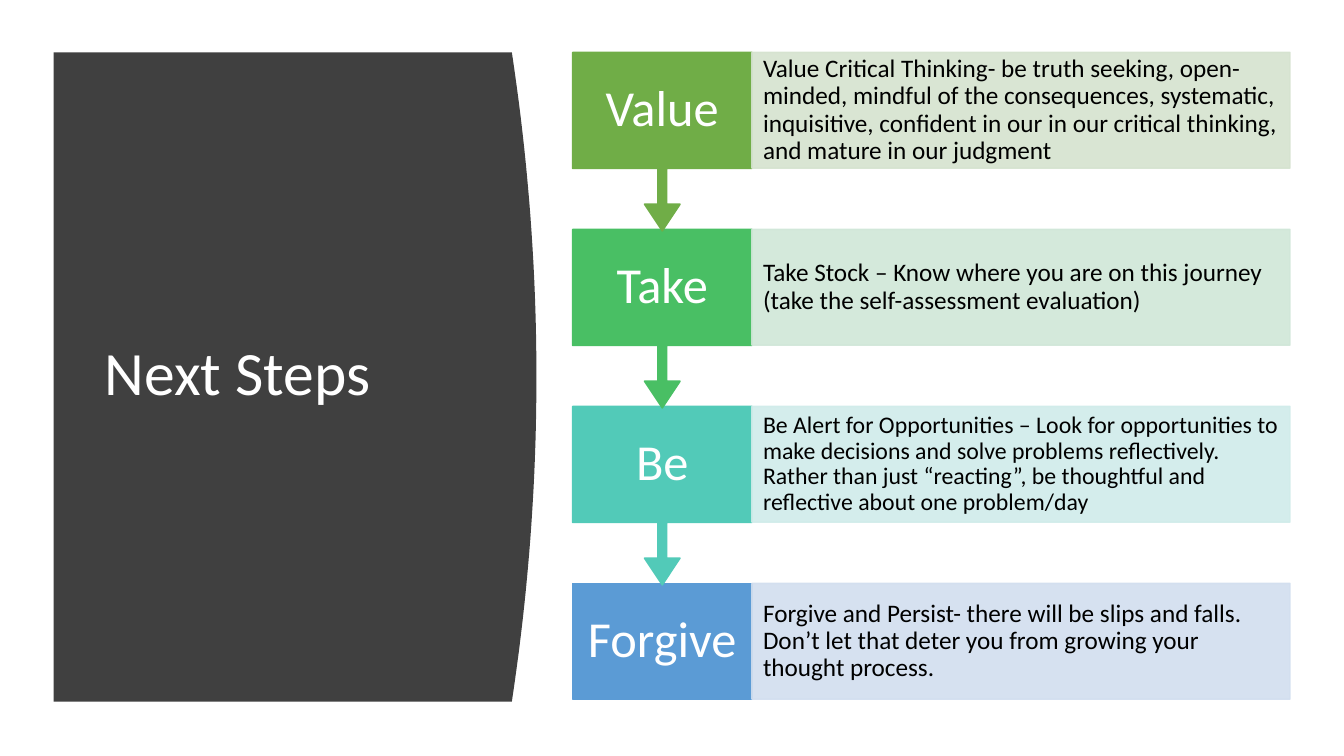
from lxml.etree import SubElement
from pptx import Presentation
from pptx.dml.color import RGBColor
from pptx.enum.shapes import MSO_SHAPE
from pptx.enum.text import MSO_ANCHOR, PP_ALIGN
from pptx.oxml.ns import qn
from pptx.util import Cm, Pt


def paint(color_format, hex_color, opacity=100):
    color_format.rgb = RGBColor.from_string(hex_color)
    if opacity < 100:
        # The colour element is the only child of the solid fill
        for color in color_format._xFill:
            SubElement(color, qn("a:alpha"), val=str(opacity * 1000))


def write(shape, text, size, hex_color, align, inset):
    frame = shape.text_frame
    frame_format = {
        "word_wrap": True,
        "vertical_anchor": MSO_ANCHOR.MIDDLE,
        "margin_left": Cm(inset),
        "margin_right": Cm(inset),
        "margin_top": 0,
        "margin_bottom": 0,
    }
    for name, value in frame_format.items():
        setattr(frame, name, value)
    para = frame.paragraphs[0]
    para.alignment = align
    para.line_spacing = 0.9
    span = para.add_run()
    span.text = text
    for name, value in {"name": "Calibri", "size": Pt(size)}.items():
        setattr(span.font, name, value)
    paint(span.font.color, hex_color)


deck = Presentation()
deck.slide_width, deck.slide_height = Cm(33.87), Cm(19.05)
page = deck.slides.add_slide(deck.slide_layouts[6])

# Dark panel with a bulging right edge
left, top, bottom = 1.35, 1.32, 17.68
bulge_right, bulge_depth, segments = 13.52, 0.62, 40
middle, half = (top + bottom) / 2, (bottom - top) / 2
edge = []
for step in range(segments + 1):
    offset = 2 * step / segments - 1
    edge.append((Cm(bulge_right - bulge_depth * offset ** 2), Cm(middle + half * offset)))
builder = page.shapes.build_freeform(Cm(left), Cm(top))
builder.add_line_segments(edge + [(Cm(left), Cm(bottom))], close=True)
panel = builder.convert_to_shape()
panel.shadow.inherit = False
panel.fill.solid()
paint(panel.fill.fore_color, "404040")
panel.line.fill.background()

# Title
title = page.shapes.add_textbox(Cm(2.39), Cm(2.82), Cm(9.5), Cm(13.31))
write(title, "Next Steps", 44, "FFFFFF", PP_ALIGN.LEFT, 0.25)

# Steps: label, strong colour, pale colour, text size, description
steps = [
    ("Value", "70AD47", "D5E3CF", 18,
     "Value Critical Thinking- be truth seeking, open-minded, mindful of the consequences, "
     "systematic, inquisitive, confident in our in our critical thinking, and mature in our judgment"),
    ("Take", "49BF64", "D0E7D8", 18,
     "Take Stock – Know where you are on this journey (take the self-assessment evaluation)"),
    ("Be", "52CAB8", "D0ECEA", 17,
     "Be Alert for Opportunities – Look for opportunities to make decisions and solve problems "
     "reflectively. Rather than just “reacting”, be thoughtful and reflective about one problem/day"),
    ("Forgive", "5B9BD5", "D2DEEF", 18,
     "Forgive and Persist- there will be slips and falls. Don’t let that deter you from growing "
     "your thought process."),
]
label_left, label_width, detail_width = 14.43, 4.52, 13.56
row_height, row_pitch, callout_height = 2.92, 4.46, 4.5

# The last step goes first so that each arrow tip lies over the step below
for row, (label, strong, pale, size, description) in reversed(list(enumerate(steps))):
    row_top = Cm(top + row * row_pitch)
    is_last = row == len(steps) - 1

    kind = MSO_SHAPE.RECTANGLE if is_last else MSO_SHAPE.UP_ARROW_CALLOUT
    height = row_height if is_last else callout_height
    block = page.shapes.add_shape(kind, Cm(label_left), row_top, Cm(label_width), Cm(height))
    if not is_last:
        block.rotation = 180
        for index, value in enumerate((0.05, 0.1, 0.15, 0.65)):
            block.adjustments[index] = value

    detail = page.shapes.add_shape(MSO_SHAPE.RECTANGLE, Cm(label_left + label_width), row_top,
                                   Cm(detail_width), Cm(row_height))
    for shape, color, opacity in ((block, strong, 100), (detail, pale, 90)):
        shape.shadow.inherit = False
        shape.fill.solid()
        paint(shape.fill.fore_color, color, opacity)
        shape.line.width = Pt(1)
        shape.line.fill.solid()
        paint(shape.line.fill.fore_color, color, opacity)
    write(detail, description, size, "000000", PP_ALIGN.LEFT, 0.28)

    caption = page.shapes.add_textbox(Cm(label_left), row_top, Cm(label_width), Cm(row_height))
    write(caption, label, 36, "FFFFFF", PP_ALIGN.CENTER, 0.33)

deck.save("out.pptx")
